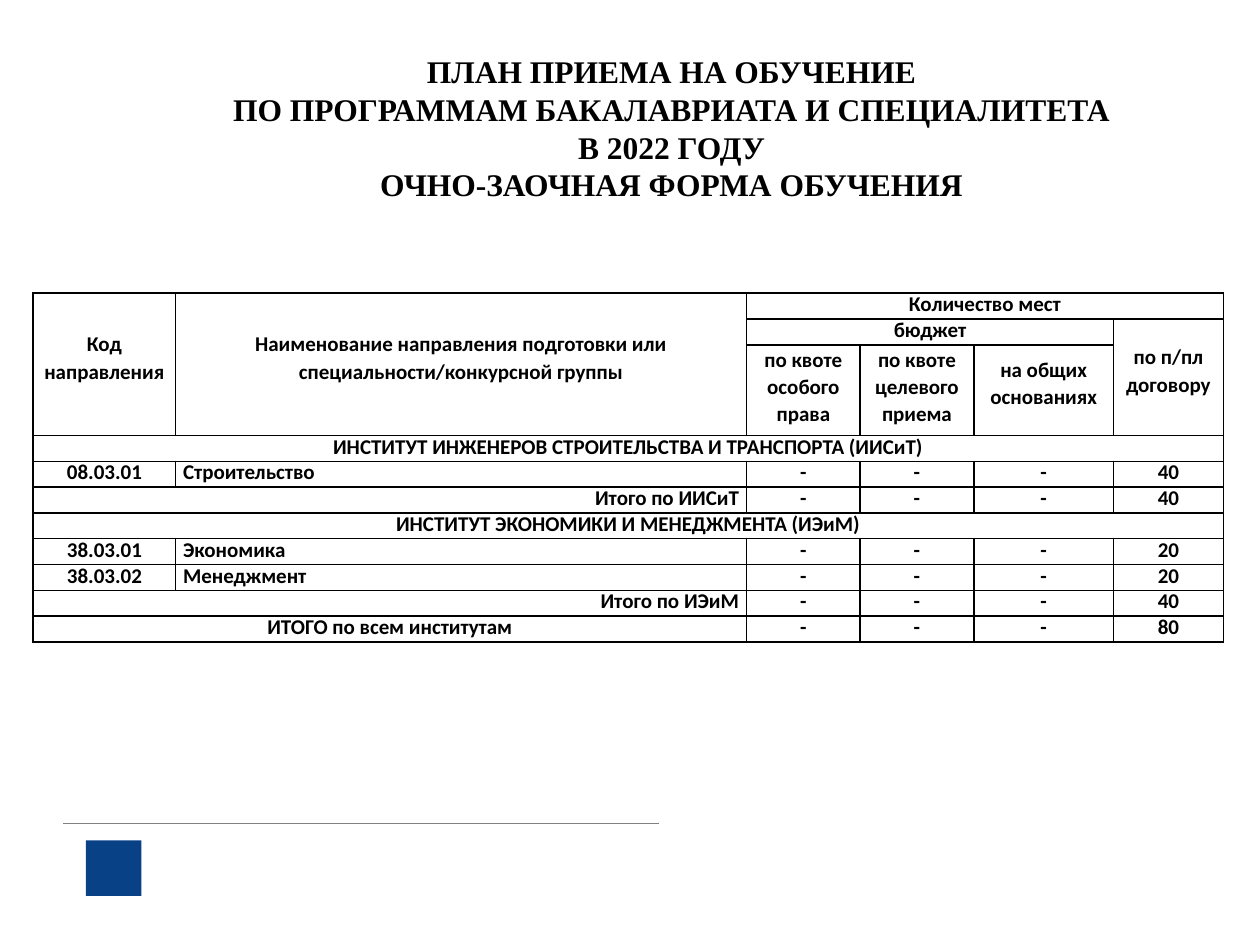
from lxml import etree
from pptx import Presentation
from pptx.dml.color import RGBColor as Rgb
from pptx.enum.shapes import MSO_CONNECTOR as Link, MSO_SHAPE as Form
from pptx.enum.text import MSO_ANCHOR as Anchor, PP_ALIGN as Align
from pptx.oxml.ns import qn
from pptx.util import Cm, Pt

INK = {"text": "000000", "rule": "808080", "mark": "094187"}
TITLE = [
    "ПЛАН ПРИЕМА НА ОБУЧЕНИЕ",
    "ПО ПРОГРАММАМ БАКАЛАВРИАТА И СПЕЦИАЛИТЕТА",
    "В 2022 ГОДУ",
    "ОЧНО-ЗАОЧНАЯ ФОРМА ОБУЧЕНИЯ",
]
# row, column, rows spanned, columns spanned, lines, bottom margin
HEADS = [
    (0, 0, 3, 1, ["Код", "направления"], 0.28),
    (0, 1, 3, 1, ["Наименование направления подготовки или",
                  "специальности/конкурсной группы"], 0.28),
    (0, 2, 1, 4, ["Количество мест"], 0),
    (1, 2, 1, 3, ["бюджет"], 0),
    (1, 5, 2, 1, ["по п/пл", "договору"], 0.28),
    (2, 2, 1, 1, ["по квоте", "особого", "права"], 0.15),
    (2, 3, 1, 1, ["по квоте", "целевого", "приема"], 0.15),
    (2, 4, 1, 1, ["на общих", "основаниях"], 0.28),
]
BODY = [
    ("band", "ИНСТИТУТ ИНЖЕНЕРОВ СТРОИТЕЛЬСТВА И ТРАНСПОРТА (ИИСиТ)"),
    ("item", "08.03.01", "Строительство", "40"),
    ("sum", "Итого по ИИСиТ", "40"),
    ("band", "ИНСТИТУТ ЭКОНОМИКИ И МЕНЕДЖМЕНТА (ИЭиМ)"),
    ("item", "38.03.01", "Экономика", "20"),
    ("item", "38.03.02", "Менеджмент", "20"),
    ("sum", "Итого по ИЭиМ", "40"),
    ("total", "ИТОГО по всем институтам", "80"),
]
COLS = [2.87, 11.51, 2.29, 2.29, 2.82, 2.21]
ROWS = [0.52, 0.52, 1.83] + [0.52] * len(BODY)
PAD = 0.15


def write(par, lines, font, size, align=Align.CENTER):
    par.alignment = align
    for n, line in enumerate(lines):
        if n:
            par.add_line_break()
        run = par.add_run()
        run.text = line
        run.font.name = font
        run.font.size = Pt(size)
        run.font.bold = True
        run.font.color.rgb = Rgb.from_string(INK["text"])


def frame(cell):
    props = cell._tc.get_or_add_tcPr()
    for side in ("lnL", "lnR", "lnT", "lnB"):
        edge = etree.SubElement(props, qn("a:" + side), w=str(Pt(1)))
        fill = etree.SubElement(edge, qn("a:solidFill"))
        etree.SubElement(fill, qn("a:srgbClr"), val=INK["text"])
    cell.fill.background()
    cell.margin_left = cell.margin_right = 0
    cell.margin_top = cell.margin_bottom = 0


def put(grid, row, col, lines, tall=1, wide=1, align=Align.CENTER, low=0):
    cell = grid.cell(row, col)
    if tall * wide > 1:
        cell.merge(grid.cell(row + tall - 1, col + wide - 1))
    par = cell.text_frame.paragraphs[0]
    par.line_spacing = 1.07 if len(lines) > 1 else Pt(13.8)
    write(par, lines, "Calibri", 12, align)
    if low:
        cell.vertical_anchor = Anchor.MIDDLE
        cell.margin_bottom = Cm(low)
    if align == Align.LEFT:
        cell.margin_left = Cm(PAD)
    if align == Align.RIGHT:
        cell.margin_right = Cm(PAD)


def fill_grid(slide):
    grid = slide.shapes.add_table(
        len(ROWS), len(COLS), Cm(0.67), Cm(5.91),
        Cm(sum(COLS)), Cm(sum(ROWS))).table
    grid.first_row = grid.horz_banding = False
    for col, wide in zip(grid.columns, COLS):
        col.width = Cm(wide)
    for row, tall in zip(grid.rows, ROWS):
        row.height = Cm(tall)
    for cell in grid.iter_cells():
        frame(cell)
    for row, col, tall, wide, lines, low in HEADS:
        put(grid, row, col, lines, tall, wide, low=low)
    for row, (kind, name, *rest) in enumerate(BODY, 3):
        if kind == "band":
            put(grid, row, 0, [name], wide=len(COLS))
            continue
        if kind == "item":
            put(grid, row, 0, [name])
            put(grid, row, 1, [rest[0]], align=Align.LEFT)
        else:
            side = Align.RIGHT if kind == "sum" else Align.CENTER
            put(grid, row, 0, [name], wide=2, align=side)
        for col, text in enumerate(["-"] * 3 + rest[-1:], 2):
            put(grid, row, col, [text])


def main():
    deck = Presentation()
    deck.slide_width, deck.slide_height = Cm(25.4), Cm(19.05)
    slide = deck.slides.add_slide(deck.slide_layouts[6])

    mark = slide.shapes.add_shape(
        Form.RECTANGLE, Cm(1.73), Cm(16.94), Cm(1.12), Cm(1.12))
    mark.shadow.inherit = False
    mark.fill.solid()
    mark.fill.fore_color.rgb = Rgb.from_string(INK["mark"])
    mark.line.fill.background()

    box = slide.shapes.add_textbox(Cm(4.65), Cm(0.99), Cm(17.78), Cm(3.12))
    text = box.text_frame
    text.word_wrap = True
    text.margin_left = text.margin_right = text.margin_bottom = 0
    text.margin_top = Cm(0.06)
    for n, line in enumerate(TITLE):
        par = text.add_paragraph() if n else text.paragraphs[0]
        write(par, [line], "Times New Roman", 18)

    rule = slide.shapes.add_connector(
        Link.STRAIGHT, Cm(1.27), Cm(16.61), Cm(13.28), Cm(16.61))
    rule.line.color.rgb = Rgb.from_string(INK["rule"])
    rule.line.width = Pt(0.57)
    etree.SubElement(rule._element.spPr, qn("a:effectLst"))

    fill_grid(slide)
    deck.save("out.pptx")


if __name__ == "__main__":
    main()
